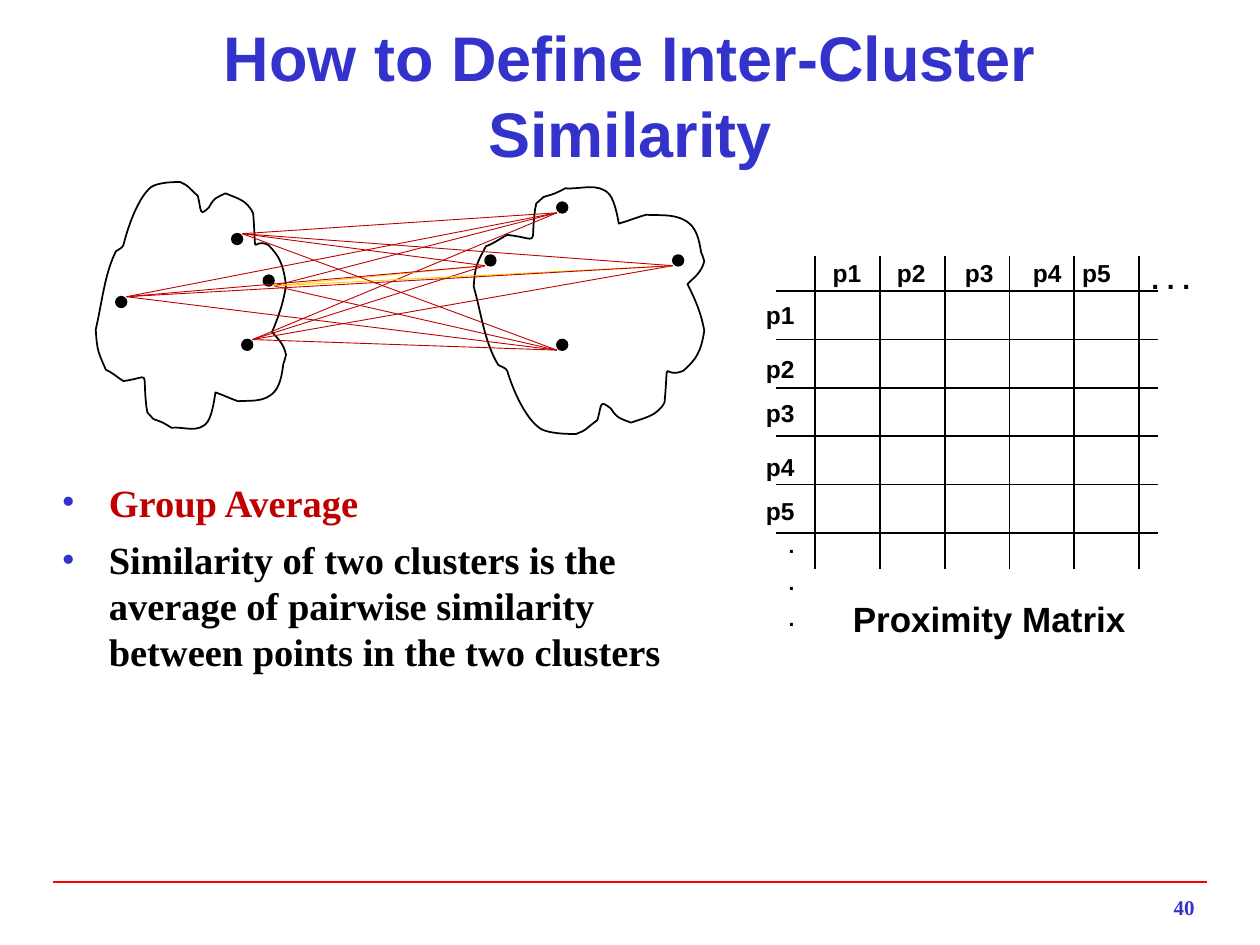
from itertools import product

from lxml import etree
from pptx import Presentation
from pptx import util as u
from pptx.dml.color import RGBColor
from pptx.enum import shapes, text
from pptx.oxml.ns import qn

COLUMNS, ROWS = 1000, 750
CELL = u.Inches(10) / COLUMNS
BLACK = RGBColor(0x00, 0x00, 0x00)
BLUE = RGBColor(0x33, 0x33, 0xCC)
CRIMSON = RGBColor(0xC0, 0x00, 0x00)
GOLD = RGBColor(0xFF, 0xCC, 0x00)
RED = RGBColor(0xFF, 0x00, 0x00)
SANS, SERIF = "Arial", "Times New Roman"
DOT = 8.4
CLOUD_GRID = (151, 200)
CLOUD_START = (16, 55)
CLOUD_CURVES = [
    (7, 73, 5, 96, 0, 117), (1, 134, 2, 135, 8, 149),
    (13, 151, 17, 155, 22, 158), (44, 155, 37, 148, 40, 176),
    (40, 179, 41, 181, 41, 183), (48, 190, 43, 187, 51, 190),
    (54, 191, 60, 195, 60, 195), (70, 194, 82, 200, 89, 190),
    (93, 184, 95, 167, 95, 167), (101, 169, 107, 172, 113, 174),
    (121, 173, 135, 176, 143, 165), (147, 159, 148, 151, 149, 144),
    (150, 142, 151, 137, 151, 137), (149, 128, 145, 125, 140, 119),
    (145, 107, 149, 96, 151, 82), (149, 66, 146, 59, 137, 50),
    (123, 43, 128, 65, 125, 25), (120, 14, 112, 13, 103, 9),
    (97, 12, 94, 12, 90, 20), (82, 28, 84, 23, 81, 11),
    (70, 1, 75, 4, 67, 0), (63, 0, 50, 0, 44, 4),
    (34, 12, 26, 34, 22, 50), (21, 53, 18, 53, 16, 55),
]


def span(*cells):
    """Turn grid cells into slide lengths."""
    return [u.Emu(round(cell * CELL)) for cell in cells]


def add_line(slide, start, end, color=BLACK, width=1):
    """Draw a straight line between two grid points."""
    line = slide.shapes.add_connector(
        shapes.MSO_CONNECTOR.STRAIGHT, *span(*start, *end))
    line.line.color.rgb = color
    line.line.width = u.Pt(width)
    etree.SubElement(line._element.spPr, qn("a:effectLst"))


def add_text(slide, box, wording, size, font=SANS, color=BLACK,
             align=text.PP_ALIGN.LEFT, anchor=text.MSO_ANCHOR.TOP):
    """Place bold wording in a box and return its paragraphs."""
    frame = slide.shapes.add_textbox(*span(*box)).text_frame
    frame.word_wrap = True
    frame.vertical_anchor = anchor
    frame.text = wording
    for paragraph in frame.paragraphs:
        paragraph.alignment = align
        style = paragraph.runs[0].font
        style.size, style.name, style.bold = u.Pt(size), font, True
        style.color.rgb = color
    return frame.paragraphs


def add_cloud(slide, box, upside_down):
    """Draw a closed cloud of smooth curves that fills the box."""
    columns, rows = CLOUD_GRID
    builder = slide.shapes.build_freeform(0, 0)
    builder.add_line_segments([(columns, 0), (columns, rows)])
    cloud = builder.convert_to_shape()
    cloud.left, cloud.top, cloud.width, cloud.height = span(*box)
    outline = cloud._element.spPr.find(".//" + qn("a:path"))
    for segment in list(outline):
        outline.remove(segment)
    outline.set("w", str(columns))
    outline.set("h", str(rows))
    for cells in [CLOUD_START, *CLOUD_CURVES]:
        kind = "a:moveTo" if cells is CLOUD_START else "a:cubicBezTo"
        segment = etree.SubElement(outline, qn(kind))
        for x, y in zip(cells[::2], cells[1::2]):
            etree.SubElement(segment, qn("a:pt"), x=str(x),
                             y=str(rows - y if upside_down else y))
    etree.SubElement(outline, qn("a:close"))
    cloud.shadow.inherit = False
    cloud.fill.background()
    cloud.line.color.rgb = BLACK
    cloud.line.width = u.Pt(1)


def add_cluster(slide, box, members, upside_down=False):
    """Draw a cloud that fills the box, with its member points."""
    left, top, _, _ = box
    add_cloud(slide, box, upside_down)
    for x, y in members:
        point = slide.shapes.add_shape(
            shapes.MSO_SHAPE.OVAL, *span(left + x, top + y, DOT, DOT))
        point.shadow.inherit = False
        point.fill.solid()
        point.fill.fore_color.rgb = BLACK
        point.line.color.rgb = BLACK
        point.line.width = u.Pt(1)


def add_clusters(slide, box):
    """Draw two clusters and every link between their points."""
    left, top, width, height = box
    left_members = [(116, 125), (133, 74), (16, 91), (108, 41)]
    right_members = [(66, 125), (9, 58), (66, 16), (158, 58)]
    right_edge = left + width - 183
    add_cluster(slide, (left, top, 151, height), left_members)
    add_cluster(slide, (right_edge, top, 183, height), right_members, True)
    for near, far in product(left_members, right_members):
        inner = near == left_members[1]
        golden = inner and far in right_members[1::2]
        add_line(slide,
                 (left + near[0] + DOT, top + near[1] + DOT * inner),
                 (right_edge + far[0], top + far[1] + DOT),
                 GOLD if golden else CRIMSON, 0.5)


def add_matrix(slide, box):
    """Draw the proximity matrix with its headings and caption."""
    left, top, width, height = box
    for index in range(6):
        x = left + 31 + 51.4 * index
        y = top + 28 + 38.4 * index
        add_line(slide, (x, top), (x, top + height))
        add_line(slide, (left, y), (left + width, y))
    column_offsets = [35, 86, 140, 194, 233]
    row_offsets = [30, 73, 108, 151, 186]
    for number, (x, y) in enumerate(zip(column_offsets, row_offsets), 1):
        add_text(slide, (left + x, top - 3, 54, 33), f"p{number}", 14)
        add_text(slide, (left - 18, top + y, 54, 33), f"p{number}", 14)
    add_text(slide, (left + 288, top, 54, 37), ". . .", 16)
    dots = add_text(slide, (left, top + 215, 31, 90), ".\n.\n.", 12)
    for dot in dots[1:]:
        dot.space_before = u.Pt(6.5)
    add_text(slide, (left + 51, top + 266, 275, 43), "Proximity Matrix", 20)


def add_bullets(slide, box):
    """Write the definition of the group average as bullets."""
    heading, definition = add_text(
        slide, box,
        "Group Average\nSimilarity of two clusters is the average of "
        "pairwise similarity between points in the two clusters",
        22, SERIF)
    heading.runs[0].font.color.rgb = CRIMSON
    heading.space_before = heading.space_after = u.Pt(2)
    definition.space_before = u.Pt(4.4)
    for paragraph in (heading, definition):
        props = paragraph._p.get_or_add_pPr()
        indent, = span(37.5)
        props.set("marL", str(indent))
        props.set("indent", str(-indent))
        tint = etree.SubElement(props, qn("a:buClr"))
        etree.SubElement(tint, qn("a:srgbClr"), val=str(BLUE))
        etree.SubElement(props, qn("a:buFont"), typeface=SERIF)
        etree.SubElement(props, qn("a:buChar"), char="•")


def add_footer(slide, box):
    """Draw the footer rule and the page number."""
    left, top, width, height = box
    add_line(slide, (left, top), (left + width, top), RED)
    add_text(slide, (left + width - 208, top + 5, 208, height - 5), "40",
             12, SERIF, BLUE, text.PP_ALIGN.RIGHT)


def main():
    """Build the slide and save it."""
    deck = Presentation()
    deck.slide_width, deck.slide_height = span(COLUMNS, ROWS)
    slide = deck.slides.add_slide(deck.slide_layouts[6])
    add_footer(slide, (42, 700, 916, 30))
    add_text(slide, (50, 41.5, 900, 67),
             "How to Define Inter-Cluster Similarity",
             36, SANS, BLUE, text.PP_ALIGN.CENTER, text.MSO_ANCHOR.MIDDLE)
    add_bullets(slide, (39, 375, 542, 307))
    add_clusters(slide, (76, 144.5, 483, 200))
    add_matrix(slide, (616, 203, 303, 249))
    deck.save("out.pptx")


if __name__ == "__main__":
    main()
